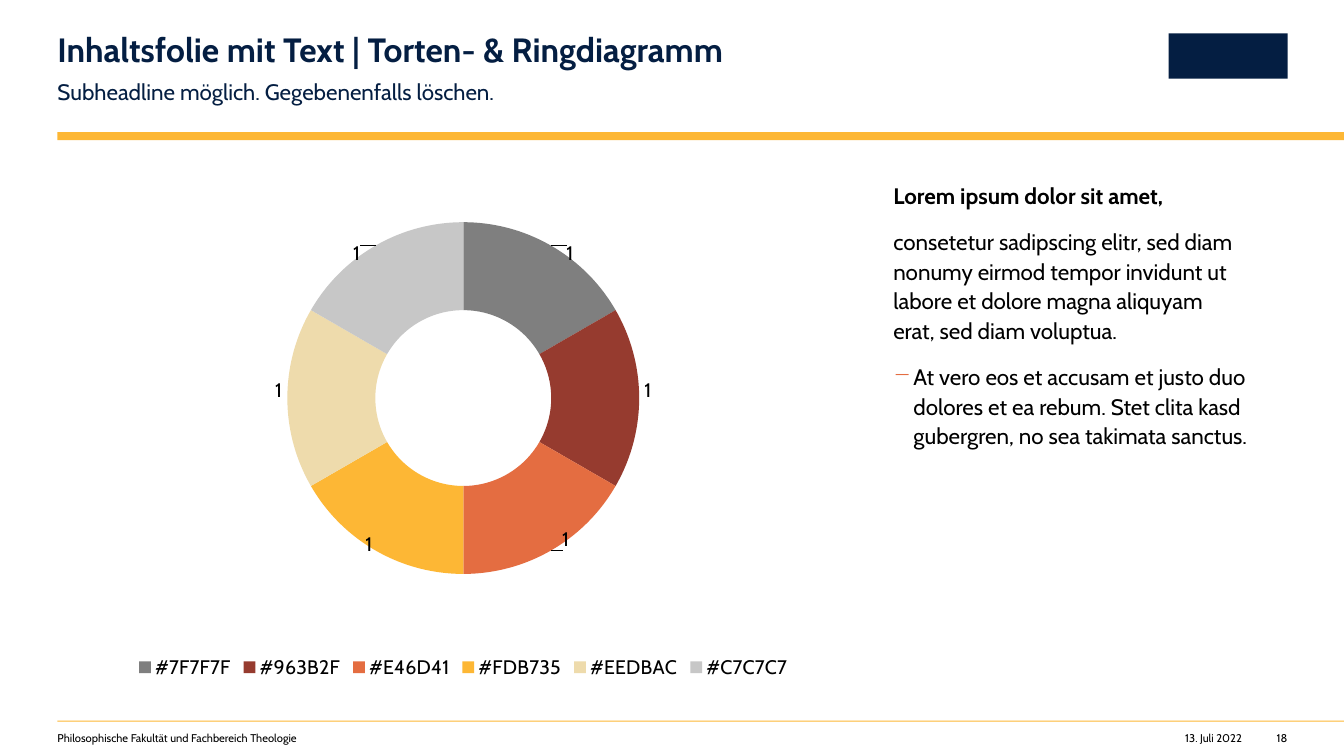
from lxml import etree
from pptx import Presentation, util as u
from pptx.chart.data import CategoryChartData
from pptx.dml.color import RGBColor
from pptx.enum import chart as charts, shapes, text
from pptx.oxml import parse_xml
from pptx.oxml.ns import nsdecls, qn

WIDTH, HEIGHT = 13.33, 7.5
LEFT, RIGHT = 0.57, 12.77  # content margins
TOP, BODY_HEIGHT = 1.78, 5
TEXT_LEFT = 8.86
NAVY, YELLOW, ORANGE, BLACK = "041E42", "FDB735", "E46D41", "000000"
FONT = "Cabin"


def color(value):
    return RGBColor.from_string(value)


def write(box, lines, size, ink, spacing=1.0, after=0, bold=False,
          align=text.PP_ALIGN.LEFT, anchor=text.MSO_ANCHOR.TOP):
    frame = box.text_frame
    frame.text = "\n".join(lines)
    frame.word_wrap = True
    frame.auto_size = text.MSO_AUTO_SIZE.NONE
    frame.vertical_anchor = anchor
    frame.margin_left = frame.margin_right = 0
    frame.margin_top = frame.margin_bottom = 0
    for para in frame.paragraphs:
        para.alignment = align
        para.line_spacing = spacing
        para.space_after = u.Pt(after)
        for span in para.runs:
            span.font.name = FONT
            span.font.size = u.Pt(size)
            span.font.bold = bold
            span.font.color.rgb = color(ink)
    return frame.paragraphs


deck = Presentation()
deck.slide_width, deck.slide_height = u.Inches(WIDTH), u.Inches(HEIGHT)
page = deck.slides.add_slide(deck.slide_layouts[5])

# Header bar, footer rule and plain logo block
for left, top, width, height, fill in (
    (LEFT, 1.31, WIDTH - LEFT, 0.08, YELLOW),
    (LEFT, 7.15, WIDTH - LEFT, 0.01, YELLOW),
    (RIGHT - 1.18, 0.33, 1.18, 0.45, NAVY),
):
    bar = page.shapes.add_shape(
        shapes.MSO_SHAPE.RECTANGLE,
        *map(u.Inches, (left, top, width, height)))
    bar.shadow.inherit = False
    bar.fill.solid()
    bar.fill.fore_color.rgb = color(fill)
    bar.line.fill.background()

# Title
title = page.shapes.title
title.left, title.top = u.Inches(LEFT), u.Inches(0.33)
title.width, title.height = u.Inches(7.49), u.Inches(0.36)
write(title, ["Inhaltsfolie mit Text | Torten- & Ringdiagramm"], 24, NAVY,
      spacing=0.9, bold=True, anchor=text.MSO_ANCHOR.MIDDLE)

# Subheadline and footer texts
for words, left, top, width, size, ink, spacing, align in (
    ("Subheadline möglich. Gegebenenfalls löschen.",
     LEFT, 0.75, 7.49, 16, NAVY, 1.1, text.PP_ALIGN.LEFT),
    ("Philosophische Fakultät und Fachbereich Theologie",
     LEFT, 7.26, 5.98, 8, BLACK, 1.0, text.PP_ALIGN.LEFT),
    ("13. Juli 2022", 11.32, 7.26, 1, 8, BLACK, 1.0, text.PP_ALIGN.RIGHT),
    ("18", RIGHT - 0.3, 7.26, 0.3, 8, BLACK, 1.0, text.PP_ALIGN.RIGHT),
):
    box = page.shapes.add_textbox(
        *map(u.Inches, (left, top, width, size / 60)))
    write(box, [words], size, ink, spacing, align=align)

# Body text with a dash bullet on the last paragraph
body = page.shapes.add_textbox(
    *map(u.Inches, (TEXT_LEFT, TOP, RIGHT - TEXT_LEFT, BODY_HEIGHT)))
heading, _, item = write(body, [
    "Lorem ipsum dolor sit amet,",
    "consetetur sadipscing elitr, sed diam nonumy eirmod tempor invidunt ut "
    "labore et dolore magna aliquyam erat, sed diam voluptua.",
    "At vero eos et accusam et justo duo dolores et ea rebum. Stet clita kasd "
    "gubergren, no sea takimata sanctus.",
], 16, BLACK, spacing=1.1, after=12)
body.text_frame.margin_right = u.Inches(0.39)
heading.runs[0].font.bold = True
item_format = item._p.get_or_add_pPr()
item_format.set("marL", str(u.Inches(0.2)))
item_format.set("indent", str(-u.Inches(0.2)))
bullet_color = etree.SubElement(item_format, qn("a:buClr"))
etree.SubElement(bullet_color, qn("a:srgbClr"), val=ORANGE)
etree.SubElement(item_format, qn("a:buChar"), char="−")

# Ring chart: each slice is named after its colour
slices = ["7F7F7F", "963B2F", ORANGE, YELLOW, "EEDBAC", "C7C7C7"]
data = CategoryChartData()
data.categories = ["#" + fill for fill in slices]
data.add_series("Series 1", [1] * len(slices))
chart = page.shapes.add_chart(
    charts.XL_CHART_TYPE.DOUGHNUT,
    *map(u.Inches, (LEFT, TOP, 8.05, BODY_HEIGHT)), data).chart
chart.has_title = False
chart.font.name, chart.font.size = "Arial", u.Pt(10)
chart.has_legend = True
chart.legend.position = charts.XL_LEGEND_POSITION.BOTTOM
chart.legend.include_in_layout = False
ring = chart.plots[0]
ring.vary_by_categories = True
series = ring.series[0]
series.data_labels.show_value = True
label_fonts = [chart.legend.font, series.data_labels.font]
for index, fill in enumerate(slices):
    point = series.points[index]
    point.format.fill.solid()
    point.format.fill.fore_color.rgb = color(fill)
    point.format.line.fill.background()
    label_fonts.append(point.data_label.font)
for font in label_fonts:
    font.name, font.size = FONT, u.Pt(14)
    font.color.rgb = color(BLACK)

# Ring position, hole size and labels moved outwards (shares of the chart)
LAYOUT = f"<c:layout {nsdecls('c')}><c:manualLayout>%s</c:manualLayout></c:layout>"
plot_area = chart.element.find(".//" + qn("c:plotArea"))
for old in plot_area.findall(qn("c:layout")):
    plot_area.remove(old)
plot_area.insert(0, parse_xml(
    LAYOUT % ('<c:layoutTarget val="inner"/>'
              '<c:xMode val="edge"/><c:yMode val="edge"/>'
              '<c:x val="0.208"/><c:y val="0.085"/>'
              '<c:w val="0.584"/><c:h val="0.698"/>')))
plot_area.find(".//" + qn("c:holeSize")).set("val", "80")
offsets = [(0.05, -0.06), (0.065, -0.015), (0.045, 0.055),
           (-0.035, 0.065), (-0.065, -0.015), (-0.05, -0.06)]
for label, (x, y) in zip(plot_area.iter(qn("c:dLbl")), offsets):
    label.insert(1, parse_xml(LAYOUT % f'<c:x val="{x}"/><c:y val="{y}"/>'))

deck.save("out.pptx")
